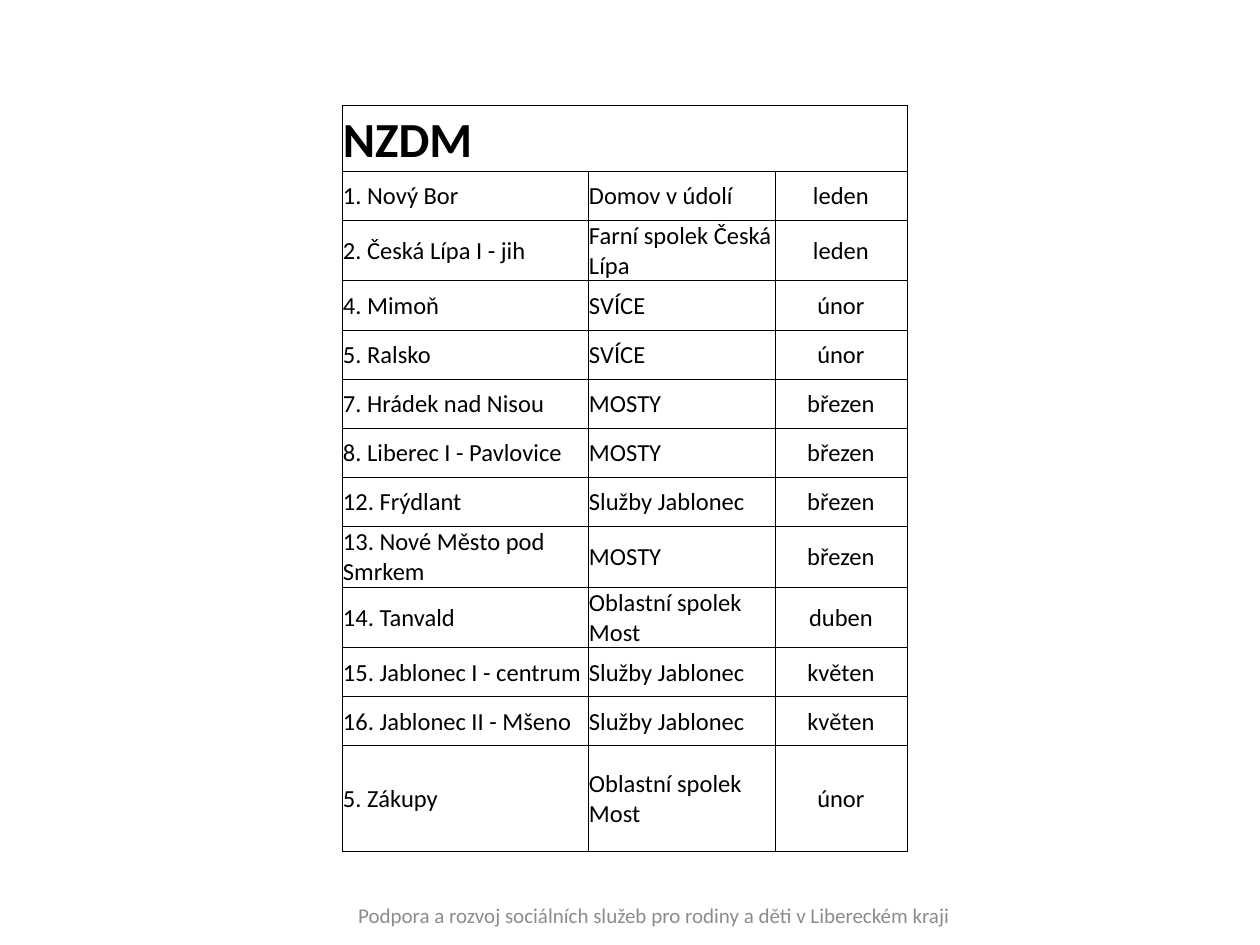
"""Build a one-page timetable of youth clubs, their providers and start months."""
from dataclasses import dataclass

from lxml.etree import SubElement
from pptx import Presentation
from pptx.dml.color import RGBColor
from pptx.enum.text import MSO_ANCHOR as Anchor, PP_ALIGN as Align
from pptx.oxml.ns import qn
from pptx.util import Emu, Pt

COLORS = {"ink": "000000", "footer": "8C8C8C", "paper": "FFFFFF"}
FONT = "Calibri"
EMU_PER_PX = 914400 / 126
COLUMN_WIDTHS = (246, 187, 132)
HEADER_HEIGHT = 66


@dataclass(frozen=True)
class Club:
    place: str
    provider: str
    month: str
    height: int = 49


CLUBS = (
    Club("1. Nový Bor", "Domov v údolí", "leden"),
    Club("2. Česká Lípa I - jih", "Farní spolek Česká Lípa", "leden"),
    Club("4. Mimoň", "SVÍCE", "únor", 50),
    Club("5. Ralsko", "SVÍCE", "únor"),
    Club("7. Hrádek nad Nisou", "MOSTY", "březen"),
    Club("8. Liberec I - Pavlovice", "MOSTY", "březen"),
    Club("12. Frýdlant", "Služby Jablonec", "březen"),
    Club("13. Nové Město pod Smrkem", "MOSTY", "březen", 50),
    Club("14. Tanvald", "Oblastní spolek Most", "duben"),
    Club("15. Jablonec I - centrum", "Služby Jablonec", "květen"),
    Club("16. Jablonec II - Mšeno", "Služby Jablonec", "květen"),
    Club("5. Zákupy", "Oblastní spolek Most", "únor", 106),
)


def px(length: int) -> Emu:
    """Turn pixels into EMU."""
    return Emu(round(length * EMU_PER_PX))


def write(frame, text: str, *, size: int, color: str = "ink",
          bold: bool = False, align=Align.LEFT) -> None:
    """Put one formatted paragraph into a text frame."""
    para = frame.paragraphs[0]
    para.alignment = align
    span = para.add_run()
    span.text = text
    span.font.name = FONT
    span.font.size = Pt(size)
    span.font.bold = bold
    span.font.color.rgb = RGBColor.from_string(COLORS[color])


def style_cell(cell, anchor=Anchor.MIDDLE) -> None:
    """Give a cell thin borders, a plain fill and tight margins."""
    props = cell._tc.get_or_add_tcPr()
    for side in ("lnL", "lnR", "lnT", "lnB"):
        line = SubElement(props, qn(f"a:{side}"), w=str(Pt(0.5)))
        fill = SubElement(line, qn("a:solidFill"))
        SubElement(fill, qn("a:srgbClr"), val=COLORS["ink"])
    cell.fill.solid()
    cell.fill.fore_color.rgb = RGBColor.from_string(COLORS["paper"])
    cell.vertical_anchor = anchor
    cell.margin_left = cell.margin_right = cell.margin_top = px(1)
    cell.margin_bottom = 0


def add_timetable(page, left: int, top: int) -> None:
    """Draw the table with a merged title row and one row per club."""
    heights = [HEADER_HEIGHT] + [club.height for club in CLUBS]
    table = page.shapes.add_table(
        len(heights), len(COLUMN_WIDTHS), px(left), px(top),
        px(sum(COLUMN_WIDTHS)), px(sum(heights))).table
    table.first_row = table.horz_banding = False
    for column, width in zip(table.columns, COLUMN_WIDTHS):
        column.width = px(width)
    for row, height in zip(table.rows, heights):
        row.height = px(height)

    title = table.cell(0, 0)
    title.merge(table.cell(0, len(COLUMN_WIDTHS) - 1))
    for cell in table.rows[0].cells:
        style_cell(cell, Anchor.BOTTOM)
    write(title.text_frame, "NZDM", size=28, bold=True)

    aligns = (Align.LEFT, Align.LEFT, Align.CENTER)
    for number, club in enumerate(CLUBS, start=1):
        texts = (club.place, club.provider, club.month)
        for cell, text, align in zip(table.rows[number].cells, texts, aligns):
            style_cell(cell)
            write(cell.text_frame, text, size=14, align=align)


def add_footer(page, left: int, top: int, width: int, height: int) -> None:
    """Draw the centred footer line."""
    box = page.shapes.add_textbox(px(left), px(top), px(width), px(height))
    frame = box.text_frame
    frame.word_wrap = True
    frame.vertical_anchor = Anchor.MIDDLE
    write(frame, "Podpora a rozvoj sociálních služeb pro rodiny a děti v Libereckém kraji",
          size=12, color="footer", align=Align.CENTER)


def main() -> None:
    """Build and save the deck."""
    deck = Presentation()
    deck.slide_width, deck.slide_height = px(1260), px(945)
    page = deck.slides.add_slide(deck.slide_layouts[6])
    add_timetable(page, 342, 105)
    add_footer(page, 312, 900, 684, 30)
    deck.save("out.pptx")


if __name__ == "__main__":
    main()
